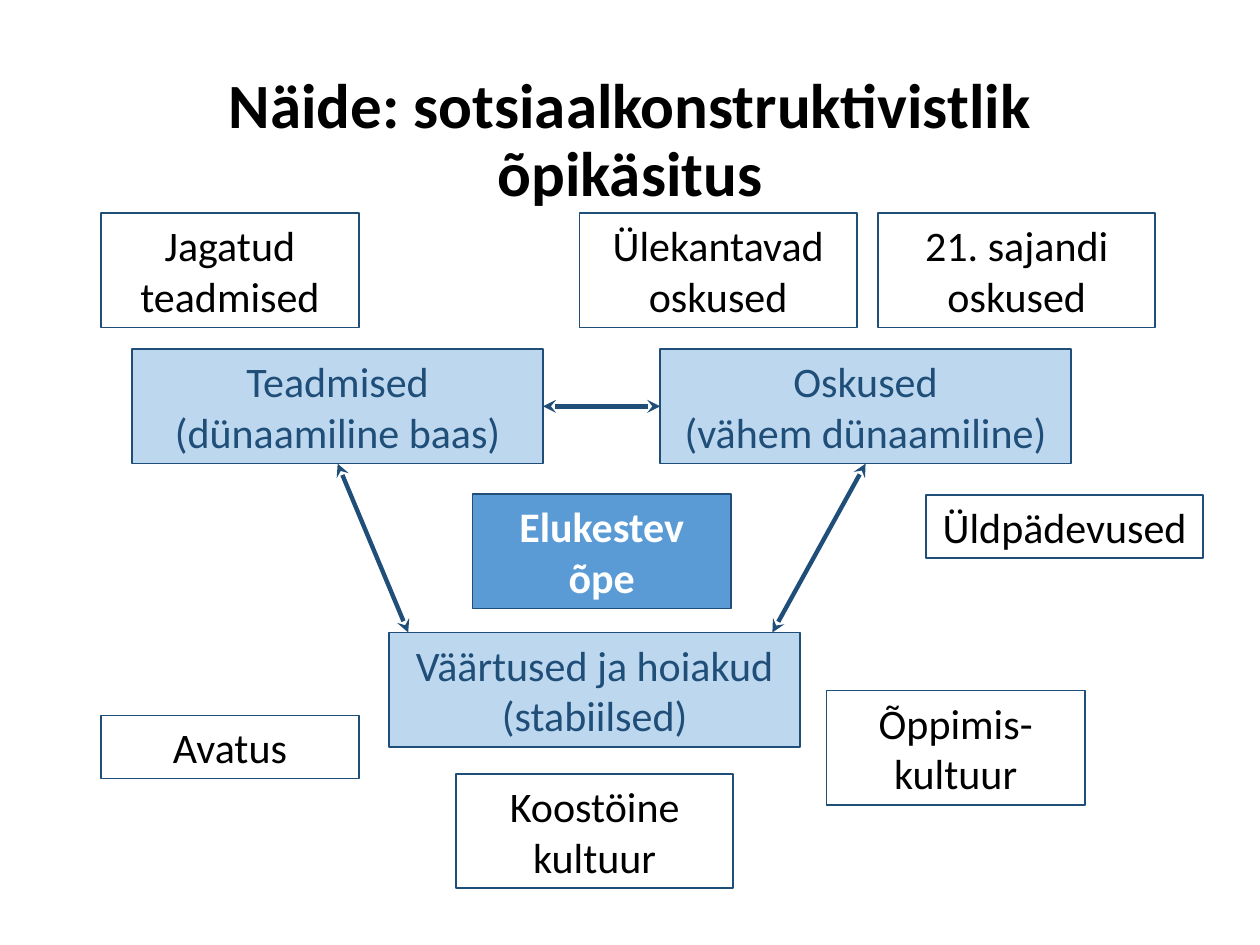
from dataclasses import dataclass

from lxml.etree import SubElement
from pptx import Presentation
from pptx.dml.color import RGBColor
from pptx.enum.shapes import MSO_CONNECTOR, MSO_SHAPE
from pptx.enum.text import MSO_ANCHOR, MSO_AUTO_SIZE, PP_ALIGN
from pptx.oxml.ns import qn
from pptx.shapes.autoshape import Shape
from pptx.shapes.connector import Connector
from pptx.slide import Slide
from pptx.text.text import _Paragraph
from pptx.util import Inches, Pt

FONT = "Calibri"
NAVY, LIGHT_BLUE, BLUE = "1F4E79", "BDD7EE", "5B9BD5"
BLACK, WHITE = "000000", "FFFFFF"
ONE_LINE, TWO_LINES = 0.5, 0.91
BOTTOM, LEFT, RIGHT = 2, 1, 3


@dataclass
class Box:
    text: str
    left: float
    top: float
    width: float
    height: float = TWO_LINES
    fill: str = WHITE
    color: str = BLACK
    bold: bool = False


def pillar(text: str, left: float, top: float) -> Box:
    """Describe one of the three main parts of the learning model."""
    return Box(text, left, top, 3.26, fill=LIGHT_BLUE, color=NAVY)


KNOWLEDGE = pillar("Teadmised\n(dünaamiline baas)", 1.05, 2.77)
SKILLS = pillar("Oskused\n(vähem dünaamiline)", 5.24, 2.77)
VALUES = pillar("Väärtused ja hoiakud (stabiilsed)", 3.09, 5.02)
OTHER_BOXES = [
    Box("Ülekantavad oskused", 4.6, 1.69, 2.2),
    Box("21. sajandi oskused", 6.97, 1.69, 2.2),
    Box("Õppimis-kultuur", 6.56, 5.48, 2.05),
    Box("Koostöine kultuur", 3.62, 6.14, 2.2),
    Box("Avatus", 0.8, 5.68, 2.05, ONE_LINE),
    Box("Jagatud teadmised", 0.8, 1.69, 2.05),
    Box("Elukestev õpe", 3.75, 3.92, 2.05, fill=BLUE, color=WHITE, bold=True),
    Box("Üldpädevused", 7.35, 3.93, 2.2, ONE_LINE),
]


def rgb(color: str) -> RGBColor:
    return RGBColor.from_string(color)


def format_paragraph(paragraph: _Paragraph, size: float, color: str, bold: bool) -> None:
    paragraph.alignment = PP_ALIGN.CENTER
    font = paragraph.font
    font.name, font.size, font.bold = FONT, Pt(size), bold
    font.color.rgb = rgb(color)


def add_title(slide: Slide, text: str) -> None:
    title = slide.shapes.title
    title.left, title.top = Inches(0.69), Inches(0.4)
    title.width, title.height = Inches(8.62), Inches(1.45)
    frame = title.text_frame
    frame.text = text
    frame.vertical_anchor = MSO_ANCHOR.MIDDLE
    paragraph = frame.paragraphs[0]
    paragraph.line_spacing = 0.9
    format_paragraph(paragraph, 36, BLACK, True)


def add_box(slide: Slide, box: Box) -> Shape:
    shape = slide.shapes.add_shape(
        MSO_SHAPE.RECTANGLE,
        Inches(box.left), Inches(box.top), Inches(box.width), Inches(box.height),
    )
    shape.shadow.inherit = False
    shape.fill.solid()
    shape.fill.fore_color.rgb = rgb(box.fill)
    shape.line.color.rgb = rgb(NAVY)
    shape.line.width = Pt(1)
    frame = shape.text_frame
    frame.word_wrap = True
    frame.auto_size = MSO_AUTO_SIZE.SHAPE_TO_FIT_TEXT
    frame.vertical_anchor = MSO_ANCHOR.MIDDLE
    paragraph = frame.paragraphs[0]
    paragraph.text = box.text
    format_paragraph(paragraph, 24, box.color, box.bold)
    return shape


def add_double_arrow(slide: Slide, start: Shape, side: int, end_x: float, end_y: float) -> Connector:
    """Draw a two-headed arrow from the middle of a shape's side to a point."""
    end = Inches(end_x), Inches(end_y)
    arrow = slide.shapes.add_connector(MSO_CONNECTOR.STRAIGHT, *end, *end)
    arrow.begin_connect(start, side)
    arrow.line.color.rgb = rgb(NAVY)
    arrow.line.width = Pt(2.5)
    line = arrow.line._get_or_add_ln()
    for tag in ("a:headEnd", "a:tailEnd"):
        SubElement(line, qn(tag), type="stealth")
    SubElement(arrow._element.spPr, qn("a:effectLst"))
    return arrow


def main() -> None:
    presentation = Presentation()
    presentation.slide_width, presentation.slide_height = Inches(10), Inches(7.5)
    slide = presentation.slides.add_slide(presentation.slide_layouts[5])

    add_title(slide, "Näide: sotsiaalkonstruktivistlik õpikäsitus")
    knowledge, skills, _ = [add_box(slide, box) for box in (KNOWLEDGE, SKILLS, VALUES)]
    for box in OTHER_BOXES:
        add_box(slide, box)

    exchange = add_double_arrow(slide, knowledge, RIGHT, SKILLS.left, 3.23)
    exchange.end_connect(skills, LEFT)
    add_double_arrow(slide, knowledge, BOTTOM, 3.24, VALUES.top)
    add_double_arrow(slide, skills, BOTTOM, 6.13, VALUES.top)

    presentation.save("out.pptx")


if __name__ == "__main__":
    main()
